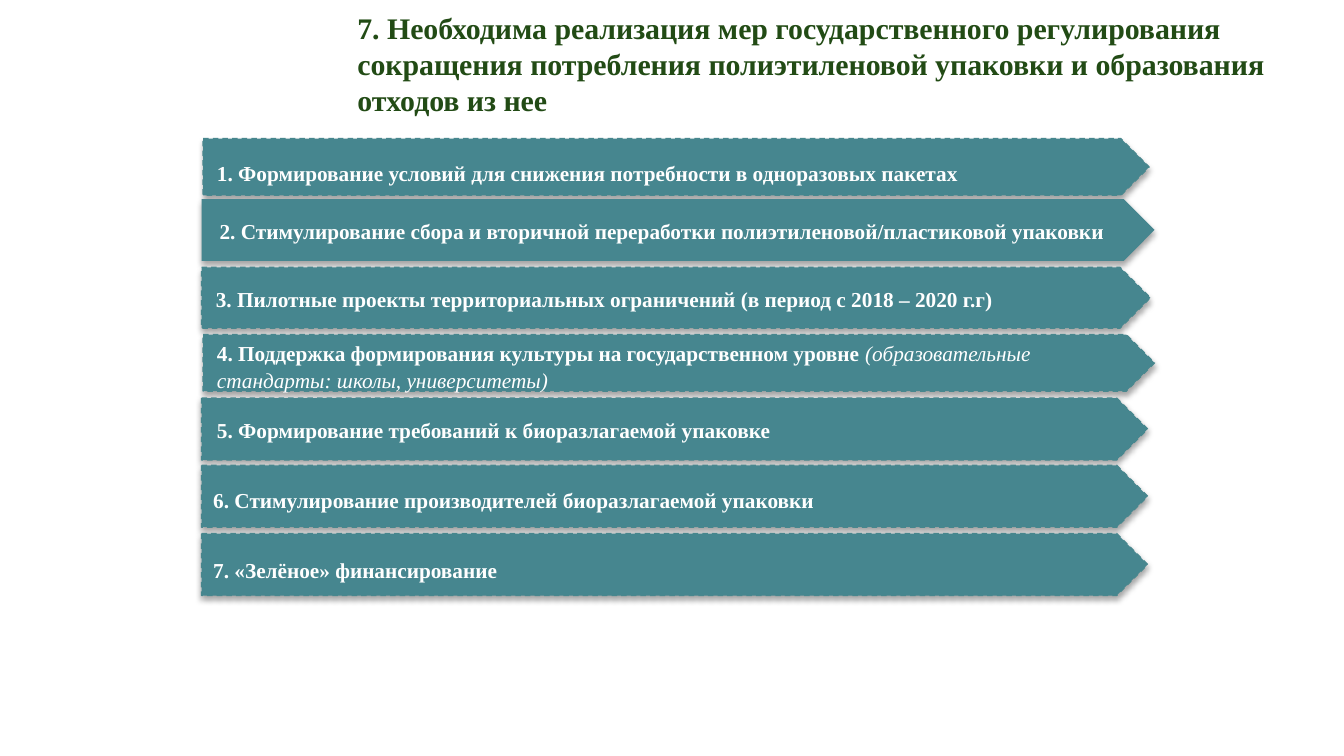
from lxml import etree
from pptx import Presentation
from pptx.dml.color import RGBColor
from pptx.enum import dml, shapes, text
from pptx.oxml import ns
from pptx.util import Cm, Pt

FONT = "Times New Roman"
COLORS = {"title": "224B15", "arrow": "46868F", "line": "48878E",
          "text": "FFFFFF", "shadow": "000000"}
TITLE = ("7. Необходима реализация мер государственного регулирования сокращения "
         "потребления полиэтиленовой упаковки и образования отходов из нее")
INDENT = Cm(0.5)

# arrow box, dashed outline, label left / top / width, bold text, italic text
MEASURES = [
    ((3.84, 2.62, 17.88, 1.07), True, (3.35, 2.87, 16.03),
     "1. Формирование условий для снижения потребности в одноразовых пакетах", ""),
    ((3.81, 3.76, 18.01, 1.17), False, (3.4, 3.96, 18.42),
     "2. Стимулирование сбора и вторичной переработки "
     "полиэтиленовой/пластиковой упаковки", ""),
    ((3.81, 5.05, 17.93, 1.15), True, (3.33, 5.25, 16.03),
     "3. Пилотные проекты территориальных ограничений (в период с 2018 – 2020 г.г)", ""),
    ((3.84, 6.32, 17.98, 1.07), True, (3.35, 6.27, 17.55),
     "4. Поддержка формирования культуры на государственном уровне ",
     "(образовательные стандарты: школы, университеты)"),
    ((3.81, 7.52, 17.88, 1.17), True, (3.35, 7.72, 12.52),
     "5. Формирование требований к биоразлагаемой упаковке", ""),
    ((3.81, 8.79, 17.88, 1.17), True, (3.28, 9.04, 12.57),
     "6. Стимулирование производителей биоразлагаемой упаковки", ""),
    ((3.81, 10.08, 17.88, 1.17), True, (3.28, 10.36, 9.83),
     "7. «Зелёное» финансирование", ""),
]


def rgb(name):
    return RGBColor.from_string(COLORS[name])


def style_run(r, size, color, italic=False):
    r.font.name = FONT
    r.font.size = Pt(size)
    r.font.bold = not italic
    r.font.italic = italic
    r.font.color.rgb = rgb(color)


def add_shadow(sp):
    sp.shadow.inherit = False
    effects = sp._element.spPr.find(ns.qn("a:effectLst"))
    shadow = etree.SubElement(effects, ns.qn("a:outerShdw"), blurRad="40000",
                              dist="23000", dir="5400000", rotWithShape="0")
    color = etree.SubElement(shadow, ns.qn("a:srgbClr"), val=COLORS["shadow"])
    etree.SubElement(color, ns.qn("a:alpha"), val="35000")


def add_title(s):
    sp = s.shapes.title
    sp.left, sp.top, sp.width, sp.height = Cm(6.5), Cm(-0.1), Cm(19.3), Cm(2.59)
    tf = sp.text_frame
    tf.text = TITLE
    tf.auto_size = text.MSO_AUTO_SIZE.NONE
    tf.vertical_anchor = text.MSO_ANCHOR.MIDDLE
    p = tf.paragraphs[0]
    p.alignment = text.PP_ALIGN.LEFT
    style_run(p.runs[0], 16, "title")


def add_arrow(s, box, dashed):
    sp = s.shapes.add_shape(shapes.MSO_SHAPE.PENTAGON, *map(Cm, box))
    sp.fill.solid()
    sp.fill.fore_color.rgb = rgb("arrow")
    if dashed:
        sp.line.color.rgb = rgb("line")
        sp.line.width = Pt(0.75)
        sp.line.dash_style = dml.MSO_LINE.DASH
    else:
        sp.line.fill.background()
    add_shadow(sp)


def add_label(s, place, bold, italic):
    height = 1.3 if italic else 0.77
    tf = s.shapes.add_textbox(*map(Cm, (*place, height))).text_frame
    tf.word_wrap = True
    tf.auto_size = text.MSO_AUTO_SIZE.SHAPE_TO_FIT_TEXT
    p = tf.paragraphs[0]
    p.line_spacing = 1.07
    p._p.get_or_add_pPr().set("marL", str(INDENT))
    p.text = bold
    style_run(p.runs[0], 11.4, "text")
    if italic:
        r = p.add_run()
        r.text = italic
        style_run(r, 11.4, "text", italic=True)


def main():
    prs = Presentation()
    prs.slide_width, prs.slide_height = Cm(25.4), Cm(14.28)
    s = prs.slides.add_slide(prs.slide_layouts[5])
    add_title(s)
    for box, dashed, *_ in MEASURES:
        add_arrow(s, box, dashed)
    for _, _, place, bold, italic in MEASURES:
        add_label(s, place, bold, italic)
    prs.save("out.pptx")


if __name__ == "__main__":
    main()
